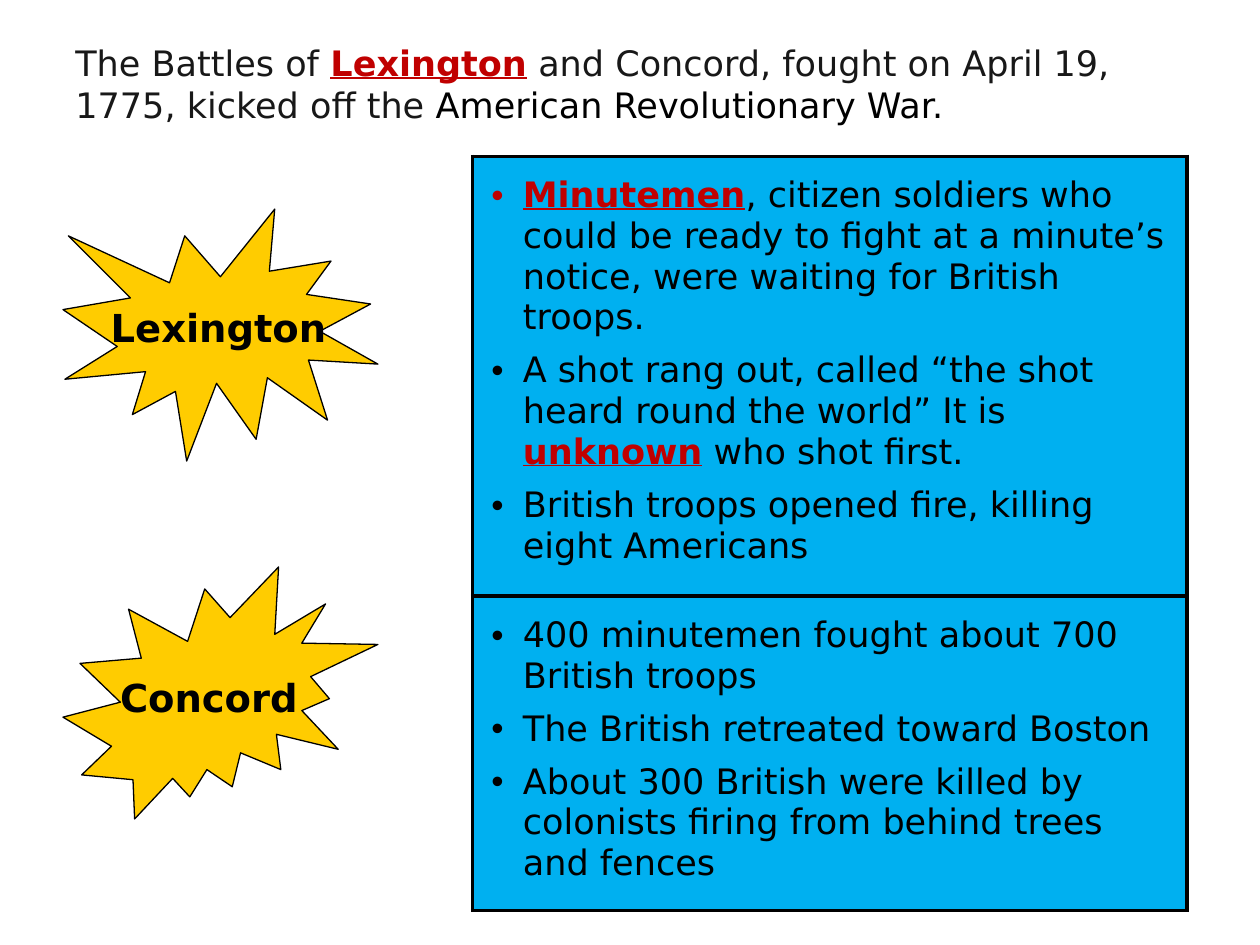
from lxml import etree
from pptx import Presentation
from pptx.dml.color import RGBColor
from pptx.enum import shapes, text
from pptx.oxml.ns import qn
from pptx.util import Inches, Pt

COLORS = {"ink": "000000", "soft": "181818", "key": "C00000",
          "burst": "FFCC00", "panel": "00B0F0"}
FONT = "DejaVu Sans"
STYLES = {
    "ink": {"color": "ink", "bold": False, "underline": False},
    "soft": {"color": "soft", "bold": False, "underline": False},
    "key": {"color": "key", "bold": True, "underline": True},
    "label": {"color": "ink", "bold": True, "size": 22},
}

TITLE = [
    ("The Battles of ", "soft"), ("Lexington", "key"),
    (" and Concord, fought on April 19, 1775, kicked off the\u00a0".replace("\u00a0", " "), "soft"),
    ("American Revolutionary War.", "ink"),
]
BATTLES = [
    {"name": "Lexington", "burst": shapes.MSO_SHAPE.EXPLOSION1, "burst_top": 1.66,
     "height": 3.49, "facts": [
         [("Minutemen", "key"),
          (", citizen soldiers who could be ready to fight at a minute’s notice, "
           "were waiting for British troops.", "ink")],
         [("A shot rang out, called “the shot heard round the world” It is ", "ink"),
          ("unknown", "key"), (" who shot first.", "ink")],
         [("British troops opened fire, killing eight Americans", "ink")]]},
    {"name": "Concord", "burst": shapes.MSO_SHAPE.EXPLOSION2, "burst_top": 4.5,
     "height": 2.49, "facts": [
         [("400 minutemen fought about 700 British troops", "ink")],
         [("The British retreated toward Boston", "ink")],
         [("About 300 British were killed by colonists firing from behind trees "
           "and fences", "ink")]]},
]
LEFT, PANEL_LEFT, PANEL_TOP, PANEL_WIDTH = 0.5, 3.75, 1.24, 5.67


def rgb(name):
    return RGBColor.from_string(COLORS[name])


def box(*lengths):
    return [Inches(length) for length in lengths]


def write(paragraph, runs):
    for words, style in runs:
        run = paragraph.add_run()
        run.text = words
        values = {"name": FONT, "size": 20, **STYLES[style]}
        run.font.color.rgb = rgb(values.pop("color"))
        values["size"] = Pt(values["size"])
        for attribute, value in values.items():
            setattr(run.font, attribute, value)


def add_bullet(paragraph):
    paragraph.space_after = Pt(7)
    properties = paragraph._p.get_or_add_pPr()
    properties.set("marL", str(Inches(0.25)))
    properties.set("indent", str(-Inches(0.25)))
    etree.SubElement(properties, qn("a:buFont"), typeface="Arial")
    etree.SubElement(properties, qn("a:buChar"), char="•")


def add_borders(cell):
    properties = cell._tc.get_or_add_tcPr()
    for index, side in enumerate(("lnL", "lnR", "lnT", "lnB")):
        line = etree.Element(qn(f"a:{side}"), w=str(Pt(2.25)))
        fill = etree.SubElement(line, qn("a:solidFill"))
        etree.SubElement(fill, qn("a:srgbClr"), val=COLORS["ink"])
        properties.insert(index, line)


def add_burst(slide, battle):
    shape = slide.shapes.add_shape(battle["burst"], *box(LEFT, battle["burst_top"], 2.5, 2))
    shape.shadow.inherit = False
    shape.fill.solid()
    shape.fill.fore_color.rgb = rgb("burst")
    shape.line.color.rgb = rgb("ink")
    shape.line.width = Pt(0.75)
    frame = shape.text_frame
    frame.word_wrap = False
    frame.vertical_anchor = text.MSO_ANCHOR.MIDDLE
    frame.paragraphs[0].alignment = text.PP_ALIGN.CENTER
    write(frame.paragraphs[0], [(battle["name"], "label")])


def add_panel(slide, battle, top):
    table = slide.shapes.add_table(
        1, 1, *box(PANEL_LEFT, top, PANEL_WIDTH, battle["height"])).table
    table.first_row = table.horz_banding = False
    cell = table.cell(0, 0)
    for side in ("left", "right", "top", "bottom"):
        setattr(cell, f"margin_{side}", Inches(0.15))
    cell.fill.solid()
    cell.fill.fore_color.rgb = rgb("panel")
    add_borders(cell)
    frame = cell.text_frame
    for index, fact in enumerate(battle["facts"]):
        paragraph = frame.add_paragraph() if index else frame.paragraphs[0]
        add_bullet(paragraph)
        write(paragraph, fact)


def main():
    presentation = Presentation()
    presentation.slide_width, presentation.slide_height = box(10, 7.5)
    slide = presentation.slides.add_slide(presentation.slide_layouts[6])
    title = slide.shapes.add_textbox(*box(LEFT, 0.28, 8.67, 0.77)).text_frame
    title.word_wrap = True
    title.auto_size = text.MSO_AUTO_SIZE.SHAPE_TO_FIT_TEXT
    write(title.paragraphs[0], TITLE)
    top = PANEL_TOP
    for battle in BATTLES:
        add_burst(slide, battle)
        add_panel(slide, battle, top)
        top += battle["height"]
    presentation.save("out.pptx")


if __name__ == "__main__":
    main()
